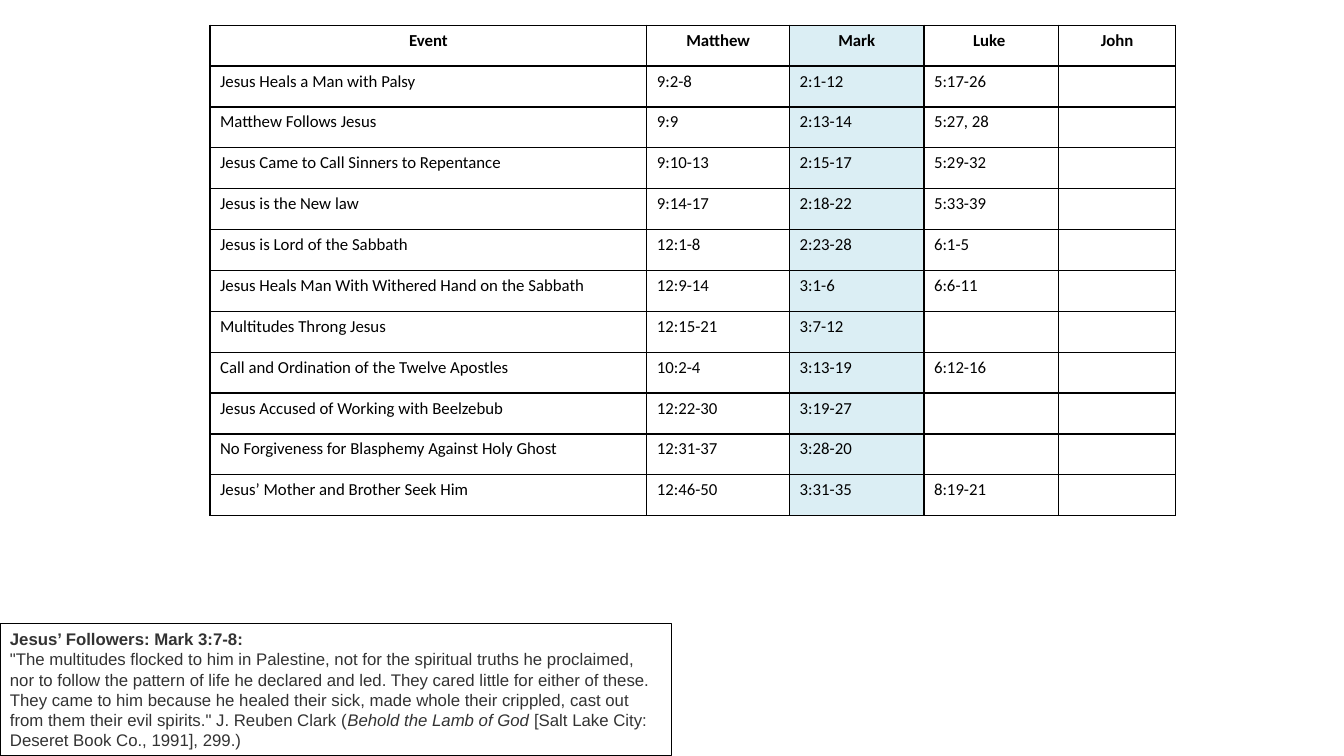
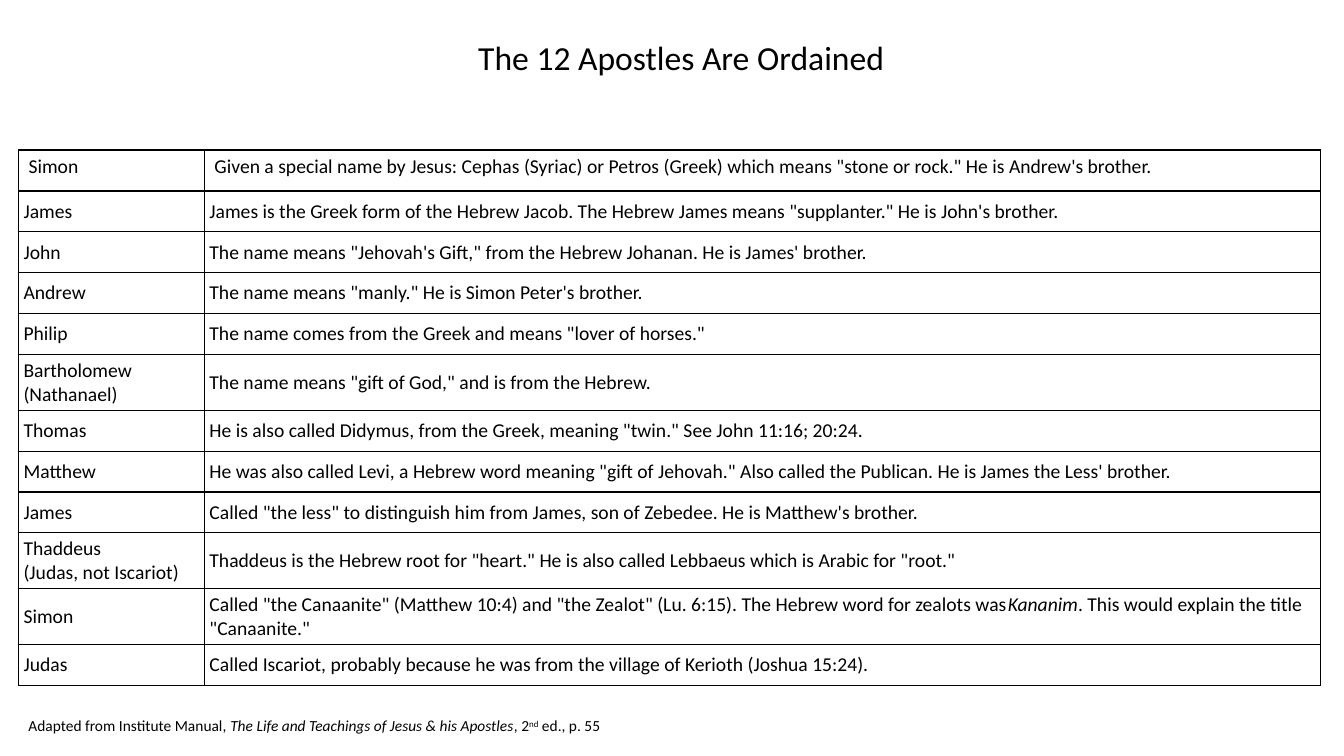
from dataclasses import dataclass

from lxml.etree import SubElement
from pptx import Presentation
from pptx.dml.color import RGBColor
from pptx.enum.shapes import MSO_SHAPE
from pptx.enum.text import MSO_ANCHOR, PP_ALIGN
from pptx.oxml.ns import qn
from pptx.util import Pt


@dataclass(frozen=True)
class TextStyle:
    size: float
    font: str = "Calibri"
    color: str = "000000"


@dataclass(frozen=True)
class Theme:
    title: TextStyle = TextStyle(24)
    events: TextStyle = TextStyle(12)
    apostles: TextStyle = TextStyle(14)
    quote: TextStyle = TextStyle(12, "Arial", "333333")
    source: TextStyle = TextStyle(11)
    line: str = "000000"
    paper: str = "FFFFFF"
    highlight: str = "DBEEF4"
    border_width: float = 1
    frame_width: float = 0.75
    row_height: float = 29.2


@dataclass(frozen=True)
class Piece:
    text: str
    bold: bool = False
    italic: bool = False
    raised: bool = False


EVENTS = [
    ("Event", "Matthew", "Mark", "Luke ", "John"),
    ("Jesus Heals a Man with Palsy", "9:2-8", "2:1-12", "5:17-26", ""),
    ("Matthew Follows Jesus", "9:9", "2:13-14", "5:27, 28", ""),
    ("Jesus Came to Call Sinners to Repentance", "9:10-13", "2:15-17", "5:29-32", ""),
    ("Jesus is the New law", "9:14-17", "2:18-22", "5:33-39", ""),
    ("Jesus is Lord of the Sabbath", "12:1-8", "2:23-28", "6:1-5", ""),
    ("Jesus Heals Man With Withered Hand on the Sabbath", "12:9-14", "3:1-6", "6:6-11", ""),
    ("Multitudes Throng Jesus", "12:15-21", "3:7-12", "", ""),
    ("Call and Ordination of the Twelve Apostles", "10:2-4", "3:13-19", "6:12-16", ""),
    ("Jesus Accused of Working with Beelzebub", "12:22-30", "3:19-27", "", ""),
    ("No Forgiveness for Blasphemy Against Holy Ghost", "12:31-37", "3:28-20", "", ""),
    ("Jesus’ Mother and Brother Seek Him", "12:46-50", "3:31-35", "8:19-21", ""),
]

QUOTE = [
    [Piece("Jesus’ Followers: Mark 3:7-8:", bold=True)],
    [
        Piece(
            '"The multitudes flocked to him in Palestine, not for the spiritual truths '
            "he proclaimed, nor to follow the pattern of life he declared and led. They "
            "cared little for either of these. They came to him because he healed their "
            "sick, made whole their crippled, cast out from them their evil spirits."
            '" J. Reuben Clark ('
        ),
        Piece("Behold the Lamb of God", italic=True),
        Piece(" [Salt Lake City: Deseret Book Co., 1991], 299.)"),
    ],
]

APOSTLES = [
    ("Simon", '''Given a special name by Jesus: Cephas (Syriac) or Petros (Greek) which means "stone or rock." He is Andrew's brother.'''),
    ("James", '''James is the Greek form of the Hebrew Jacob. The Hebrew James means "supplanter." He is John's brother.'''),
    ("John", '''The name means "Jehovah's Gift," from the Hebrew Johanan. He is James' brother.'''),
    ("Andrew", '''The name means "manly." He is Simon Peter's brother.'''),
    ("Philip", 'The name comes from the Greek and means "lover of horses."'),
    ("Bartholomew (Nathanael)", 'The name means "gift of God," and is from the Hebrew.'),
    ("Thomas", 'He is also called Didymus, from the Greek, meaning "twin." See John 11:16; 20:24.'),
    ("Matthew", '''He was also called Levi, a Hebrew word meaning "gift of Jehovah." Also called the Publican. He is James the Less' brother.'''),
    ("James", '''Called "the less" to distinguish him from James, son of Zebedee. He is Matthew's brother.'''),
    ("Thaddeus\n(Judas, not Iscariot)", 'Thaddeus is the Hebrew root for "heart." He is also called Lebbaeus which is Arabic for "root."'),
    ("Simon", [[
        Piece('Called "the Canaanite" (Matthew 10:4) and "the Zealot" (Lu. 6:15). The Hebrew word for zealots was'),
        Piece("Kananim", italic=True),
        Piece('. This would explain the title "Canaanite."'),
    ]]),
    ("Judas", "Called Iscariot, probably because he was from the village of Kerioth (Joshua 15:24)."),
]

SOURCE = [[
    Piece("Adapted from Institute Manual, "),
    Piece("The Life and Teachings of Jesus & his Apostles", italic=True),
    Piece(", 2"),
    Piece("nd", raised=True),
    Piece(" ed., p. 55"),
]]


class Deck:
    def __init__(self, theme):
        self.theme = theme
        self.presentation = Presentation()
        self.presentation.slide_width = Pt(960)
        self.presentation.slide_height = Pt(540)
        self.slide = None

    def add_slide(self, layout_name):
        layout = self.presentation.slide_layouts.get_by_name(layout_name)
        self.slide = self.presentation.slides.add_slide(layout)

    def set_text(self, text_frame, content, style, align=PP_ALIGN.LEFT):
        if isinstance(content, str):
            text_frame.text = content
        else:
            for index, pieces in enumerate(content):
                paragraph = text_frame.add_paragraph() if index else text_frame.paragraphs[0]
                for piece in pieces:
                    self.add_piece(paragraph, piece)
        for paragraph in text_frame.paragraphs:
            paragraph.alignment = align
            for run in paragraph.runs:
                run.font.size = Pt(style.size)
                run.font.name = style.font
                run.font.color.rgb = RGBColor.from_string(style.color)

    def add_piece(self, paragraph, piece):
        run = paragraph.add_run()
        run.text = piece.text
        run.font.bold = piece.bold
        run.font.italic = piece.italic
        if piece.raised:
            run._r.get_or_add_rPr().set("baseline", "30000")

    def title(self, text, left, top, width, height):
        shape = self.slide.shapes.title
        shape.left, shape.top = Pt(left), Pt(top)
        shape.width, shape.height = Pt(width), Pt(height)
        shape.text_frame.vertical_anchor = MSO_ANCHOR.TOP
        self.set_text(shape.text_frame, text, self.theme.title, PP_ALIGN.CENTER)

    def text_box(self, content, style, left, top, width, height):
        shape = self.slide.shapes.add_textbox(Pt(left), Pt(top), Pt(width), Pt(height))
        shape.text_frame.word_wrap = True
        self.set_text(shape.text_frame, content, style)

    def framed_text(self, content, style, left, top, width, height):
        shape = self.slide.shapes.add_shape(
            MSO_SHAPE.RECTANGLE, Pt(left), Pt(top), Pt(width), Pt(height)
        )
        shape.shadow.inherit = False
        shape.fill.background()
        shape.line.color.rgb = RGBColor.from_string(self.theme.line)
        shape.line.width = Pt(self.theme.frame_width)
        shape.text_frame.word_wrap = True
        shape.text_frame.vertical_anchor = MSO_ANCHOR.TOP
        self.set_text(shape.text_frame, content, style)

    def table(self, rows, style, left, top, widths, has_header=False):
        height = self.theme.row_height
        table = self.slide.shapes.add_table(
            len(rows), len(widths), Pt(left), Pt(top), Pt(sum(widths)), Pt(height * len(rows))
        ).table
        table.first_row = has_header
        table.horz_banding = False
        for column, width in zip(table.columns, widths):
            column.width = Pt(width)
        for row, contents in zip(table.rows, rows):
            row.height = Pt(height)
            for cell, content in zip(row.cells, contents):
                self.set_text(cell.text_frame, content, style)
                self.add_borders(cell)
                self.fill_cell(cell, self.theme.paper)
        if has_header:
            self.format_header(table)
        return table

    def format_header(self, table):
        for cell in table.rows[0].cells:
            for paragraph in cell.text_frame.paragraphs:
                paragraph.alignment = PP_ALIGN.CENTER
                for run in paragraph.runs:
                    run.font.bold = True

    def fill_cell(self, cell, color):
        cell.fill.solid()
        cell.fill.fore_color.rgb = RGBColor.from_string(color)

    def add_borders(self, cell):
        properties = cell._tc.get_or_add_tcPr()
        for side in ("a:lnL", "a:lnR", "a:lnT", "a:lnB"):
            border = SubElement(properties, qn(side), w=str(Pt(self.theme.border_width)))
            fill = SubElement(border, qn("a:solidFill"))
            SubElement(fill, qn("a:srgbClr"), val=self.theme.line)

    def highlight_column(self, table, index):
        for row in table.rows:
            self.fill_cell(row.cells[index], self.theme.highlight)

    def center_rows(self, table, first):
        for row in list(table.rows)[first:]:
            for cell in row.cells:
                cell.vertical_anchor = MSO_ANCHOR.MIDDLE
                cell.margin_left = Pt(3.6)
                cell.margin_right = Pt(7.2)
                cell.margin_top = cell.margin_bottom = Pt(2.88)


def build_events(deck):
    deck.add_slide("Blank")
    table = deck.table(
        EVENTS, deck.theme.events, 150, 18, [312, 102, 96, 96, 84], has_header=True
    )
    deck.highlight_column(table, 2)
    deck.framed_text(QUOTE, deck.theme.quote, 0, 445.7, 480, 94.3)


def build_apostles(deck):
    deck.add_slide("Title Only")
    deck.title("The 12 Apostles Are Ordained", 324.6, 23, 324, 36)
    table = deck.table(APOSTLES, deck.theme.apostles, 13.2, 107.2, [132.8, 797.2])
    deck.center_rows(table, 1)
    deck.text_box(SOURCE, deck.theme.source, 13.2, 508.3, 480, 21)


def main():
    deck = Deck(Theme())
    build_events(deck)
    build_apostles(deck)
    deck.presentation.save("out.pptx")


if __name__ == "__main__":
    main()
